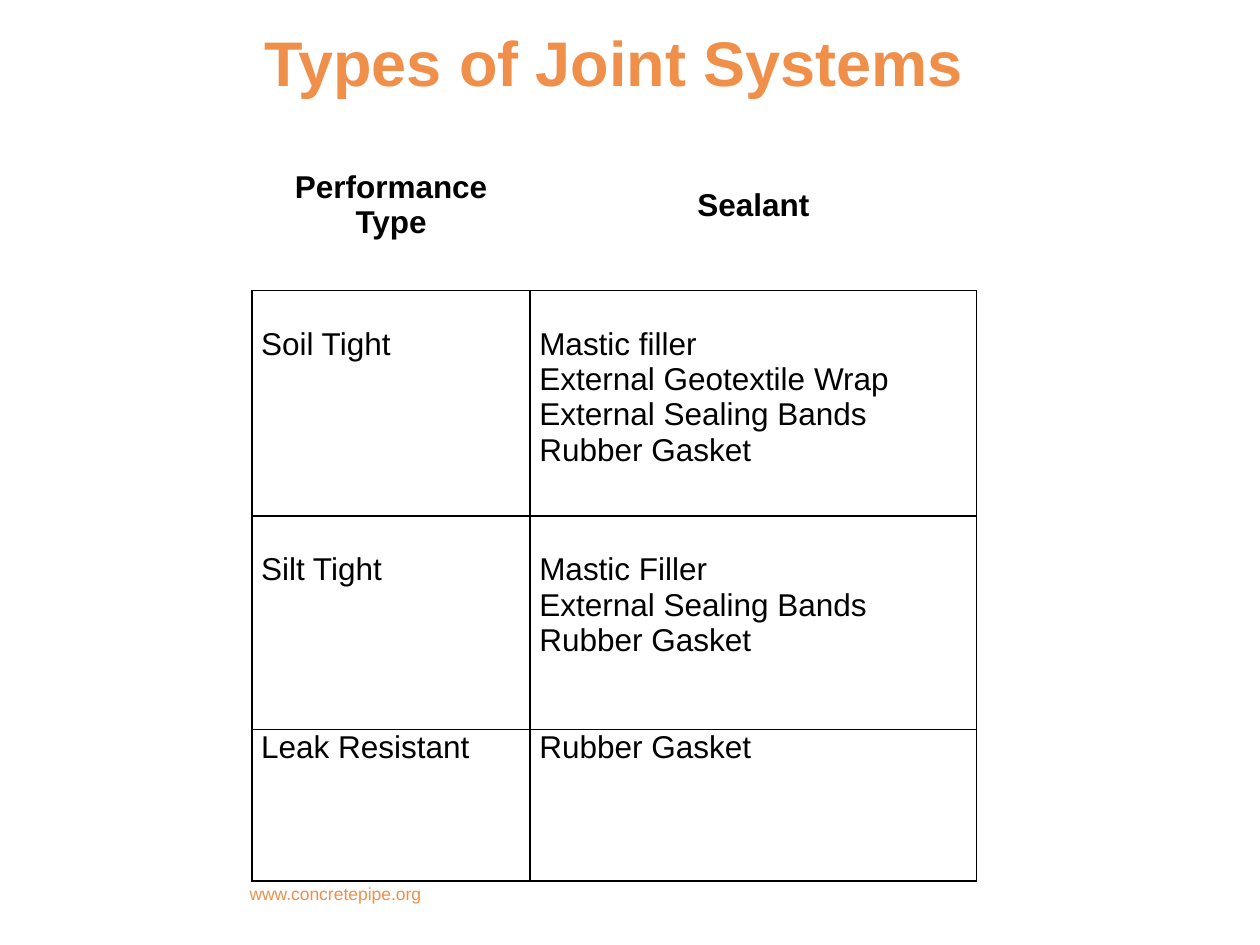
from dataclasses import dataclass

from lxml.etree import SubElement
from pptx import Presentation
from pptx.dml.color import RGBColor
from pptx.enum.text import MSO_ANCHOR, PP_ALIGN
from pptx.oxml.ns import qn
from pptx.util import Pt

FONT = "Arial"
COLORS = {"accent": "F08F49", "text": "000000", "border": "000000"}
COLUMN_WIDTHS = (159, 255)
BODY_SIZE = 18
LINE_HEIGHT = 20.7


@dataclass
class Label:
    text: str
    left: float
    top: float
    width: float
    height: float
    size: float
    bold: bool = False
    anchor: MSO_ANCHOR = MSO_ANCHOR.TOP


@dataclass
class JointRow:
    height: float
    performance: str
    sealants: str
    top_margin: float = 0
    header: bool = False


LABELS = (
    Label("Types of Joint Systems", 144, 0, 576, 60, 36, True, MSO_ANCHOR.BOTTOM),
    Label("www.concretepipe.org", 135.5, 501, 228, 37.5, 10),
)
ROWS = (
    JointRow(97.5, "Performance Type", "Sealant", header=True),
    JointRow(
        129,
        "Soil Tight",
        "Mastic filler\nExternal Geotextile Wrap\nExternal Sealing Bands\nRubber Gasket",
        LINE_HEIGHT,
    ),
    JointRow(
        122,
        "Silt Tight",
        "Mastic Filler\nExternal Sealing Bands\nRubber Gasket",
        LINE_HEIGHT,
    ),
    JointRow(86.5, "Leak Resistant", "Rubber Gasket"),
)


def format_text(text_frame, size: float, color: str, bold: bool, alignment: PP_ALIGN) -> None:
    for paragraph in text_frame.paragraphs:
        paragraph.alignment = alignment
        for run in paragraph.runs:
            run.font.name = FONT
            run.font.size = Pt(size)
            run.font.bold = bold
            run.font.color.rgb = RGBColor.from_string(COLORS[color])


def add_label(slide, label: Label) -> None:
    shape = slide.shapes.add_textbox(
        Pt(label.left), Pt(label.top), Pt(label.width), Pt(label.height)
    )
    text_frame = shape.text_frame
    text_frame.word_wrap = True
    text_frame.vertical_anchor = label.anchor
    text_frame.text = label.text
    format_text(text_frame, label.size, "accent", label.bold, PP_ALIGN.LEFT)


def add_borders(cell, visible_sides: str) -> None:
    """Draw the sides named by L, R, T and B, and clear the others."""
    properties = cell._tc.get_or_add_tcPr()
    for side in "LRTB":
        line = SubElement(properties, qn(f"a:ln{side}"), w=str(Pt(1)))
        if side in visible_sides:
            fill = SubElement(line, qn("a:solidFill"))
            SubElement(fill, qn("a:srgbClr"), val=COLORS["border"])
        else:
            SubElement(line, qn("a:noFill"))


def fill_cell(cell, text: str, row: JointRow) -> None:
    cell.margin_left = cell.margin_right = Pt(5.2)
    cell.margin_top = Pt(row.top_margin)
    cell.margin_bottom = Pt(0)
    cell.vertical_anchor = MSO_ANCHOR.MIDDLE if row.header else MSO_ANCHOR.TOP
    add_borders(cell, "B" if row.header else "LRTB")
    cell.fill.background()
    cell.text_frame.text = text
    alignment = PP_ALIGN.CENTER if row.header else PP_ALIGN.LEFT
    format_text(cell.text_frame, BODY_SIZE, "text", row.header, alignment)


def add_joint_table(slide) -> None:
    table = slide.shapes.add_table(
        len(ROWS),
        len(COLUMN_WIDTHS),
        Pt(144),
        Pt(68.5),
        Pt(sum(COLUMN_WIDTHS)),
        Pt(sum(row.height for row in ROWS)),
    ).table
    table.first_row = False
    table.horz_banding = False
    for column, width in zip(table.columns, COLUMN_WIDTHS):
        column.width = Pt(width)
    for table_row, row in zip(table.rows, ROWS):
        table_row.height = Pt(row.height)
        for cell, text in zip(table_row.cells, (row.performance, row.sealants)):
            fill_cell(cell, text, row)


def main() -> None:
    presentation = Presentation()
    presentation.slide_width = Pt(720)
    presentation.slide_height = Pt(540)
    slide = presentation.slides.add_slide(presentation.slide_layouts[6])
    title, website = LABELS
    add_label(slide, title)
    add_joint_table(slide)
    add_label(slide, website)
    presentation.save("out.pptx")


if __name__ == "__main__":
    main()
